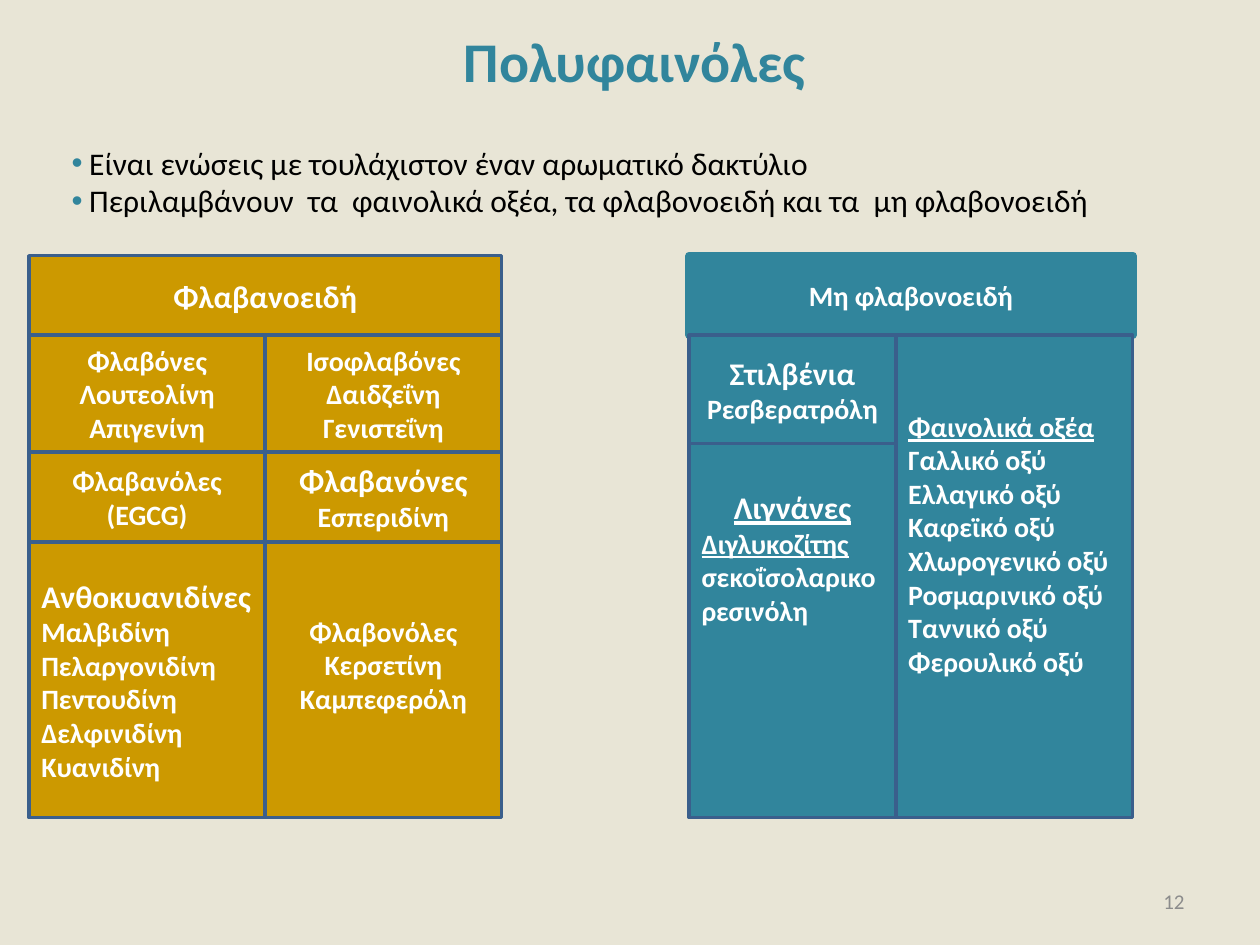
from itertools import accumulate

from lxml.etree import SubElement
from pptx import Presentation
from pptx.dml.color import RGBColor
from pptx.enum.shapes import MSO_SHAPE as Shape
from pptx.enum.text import MSO_ANCHOR as Anchor, PP_ALIGN as Align
from pptx.oxml.ns import qn
from pptx.util import Inches, Pt

WIDTH, HEIGHT = 10, 7.5
FONT = "Calibri"
COLORS = {"paper": "E8E5D6", "teal": "31859C", "gold": "CC9900", "edge": "3A5F8C",
          "white": "FFFFFF", "black": "000000", "gray": "8C8C8C"}


def color(name):
    return RGBColor.from_string(COLORS[name])


def add_span(para, text, ink, **formats):
    span = para.add_run()
    span.text = text
    span.font.name = FONT
    span.font.color.rgb = color(ink)
    for name, value in formats.items():
        setattr(span.font, name, value)


def add_text_box(page, box, anchor=Anchor.MIDDLE):
    frame = page.shapes.add_textbox(*map(Inches, box)).text_frame
    frame.word_wrap = True
    frame.vertical_anchor = anchor
    return frame


def add_line(page, box, text, ink, align, **formats):
    para = add_text_box(page, box).paragraphs[0]
    para.alignment = align
    add_span(para, text, ink, **formats)


def add_bullets(page, box, lines):
    frame = add_text_box(page, box, Anchor.TOP)
    for index, line in enumerate(lines):
        para = frame.add_paragraph() if index else frame.paragraphs[0]
        props = para._p.get_or_add_pPr()
        props.set("marL", str(Inches(0.14)))
        props.set("indent", str(-Inches(0.14)))
        tint = SubElement(props, qn("a:buClr"))
        SubElement(tint, qn("a:srgbClr")).set("val", COLORS["teal"])
        SubElement(props, qn("a:buFont")).set("typeface", "Arial")
        SubElement(props, qn("a:buChar")).set("char", "•")
        add_span(para, line, "black", size=Pt(18))


def add_cell(page, box, fill, lines, edge="edge", weight=2, lift=0):
    """Draw one filled cell; lift raises its centred text by that many inches."""
    cell = page.shapes.add_shape(Shape.RECTANGLE, *map(Inches, box))
    cell.shadow.inherit = False
    cell.fill.solid()
    cell.fill.fore_color.rgb = color(fill)
    cell.line.color.rgb = color(edge)
    cell.line.width = Pt(weight)
    frame = cell.text_frame
    frame.word_wrap = True
    frame.vertical_anchor = Anchor.MIDDLE
    frame.margin_bottom = Inches(0.05 + 2 * lift)
    for index, (align, *spans) in enumerate(lines):
        para = frame.add_paragraph() if index else frame.paragraphs[0]
        para.alignment = align
        for text, size, underline in spans:
            add_span(para, text, "white", size=Pt(size), bold=True, underline=underline)


def edges(start, length, weights):
    total = sum(weights)
    return [start + length * part / total for part in accumulate([0, *weights])]


def draw_panel(page, box, fill, columns, rows, cells):
    """Fill a grid; each cell gives column, row, spans, lines and extra formats."""
    left, top, width, height = box
    across, down = edges(left, width, columns), edges(top, height, rows)
    for column, row, column_span, row_span, lines, formats in cells:
        x, y = across[column], down[row]
        cell_box = x, y, across[column + column_span] - x, down[row + row_span] - y
        add_cell(page, cell_box, fill, lines, **formats)


def centered(*texts, first=16):
    return [(Align.CENTER, (text, 16 if i else first, False)) for i, text in enumerate(texts)]


def listed(*texts, first=16, underline=False):
    return [(Align.LEFT, (text, 16 if i else first, underline and not i))
            for i, text in enumerate(texts)]


FLAVONOIDS = [
    (0, 0, 2, 1, centered("Φλαβανοειδή", first=18), {}),
    (0, 1, 1, 1, centered("Φλαβόνες", "Λουτεολίνη", "Απιγενίνη"), {}),
    (1, 1, 1, 1, centered("Ισοφλαβόνες", "Δαιδζεΐνη Γενιστεΐνη"), {}),
    (0, 2, 1, 1, centered("Φλαβανόλες", "(EGCG)"), {}),
    (1, 2, 1, 1, centered("Φλαβανόνες", "Eσπεριδίνη", first=18), {}),
    (0, 3, 1, 1, listed("Ανθοκυανιδίνες", "Μαλβιδίνη", "Πελαργονιδίνη", "Πεντουδίνη",
                        "Δελφινιδίνη", "Κυανιδίνη", first=18), {}),
    (1, 3, 1, 1, centered("Φλαβονόλες", "Κερσετίνη", "Καμπεφερόλη"), {"lift": 0.12}),
]
LIGNANS = [
    (Align.CENTER, ("Λιγνάνες", 18, True)),
    (Align.LEFT, ("Διγλυκοζίτης ", 16, True), ("σεκοΐσολαρικορεσινόλη", 16, False)),
]
NON_FLAVONOIDS = [
    (0, 0, 2, 1, centered("Μη φλαβονοειδή"), {"edge": "teal", "weight": 4.5}),
    (1, 1, 1, 2, listed("Φαινολικά οξέα", "Γαλλικό οξύ", "Ελλαγικό οξύ", "Καφεϊκό οξύ",
                        "Χλωρογενικό οξύ", "Ροσμαρινικό οξύ", "Ταννικό οξύ",
                        "Φερουλικό οξύ", underline=True), {"lift": 0.26}),
    (0, 1, 1, 1, centered("Στιλβένια", "Ρεσβερατρόλη", first=18), {}),
    (0, 2, 1, 1, LIGNANS, {"lift": 0.58}),
]


def build_polyphenols(deck):
    page = deck.slides.add_slide(deck.slide_layouts[6])
    page.background.fill.solid()
    page.background.fill.fore_color.rgb = color("paper")
    add_line(page, (0.62, 0, 8.84, 0.95), "Πολυφαινόλες", "teal", Align.CENTER,
             size=Pt(32), bold=True)
    add_line(page, (7.17, 6.95, 2.33, 0.4), "12", "gray", Align.RIGHT, size=Pt(12))
    add_bullets(page, (0.47, 1.09, 8.83, 0.75), [
        "Είναι ενώσεις με τουλάχιστον έναν αρωματικό δακτύλιο",
        "Περιλαμβάνουν  τα  φαινολικά οξέα, τα φλαβονοειδή και τα  μη φλαβονοειδή"])
    top, height = 2.03, 4.46
    draw_panel(page, (0.23, top, 3.75, height), "gold",
               [1, 1], [0.63, 0.93, 0.71, 2.19], FLAVONOIDS)
    draw_panel(page, (5.47, top, 3.52, height), "teal",
               [1.64, 1.88], [0.63, 0.86, 2.97], NON_FLAVONOIDS)


def main():
    deck = Presentation()
    deck.slide_width, deck.slide_height = Inches(WIDTH), Inches(HEIGHT)
    build_polyphenols(deck)
    deck.save("out.pptx")


if __name__ == "__main__":
    main()
